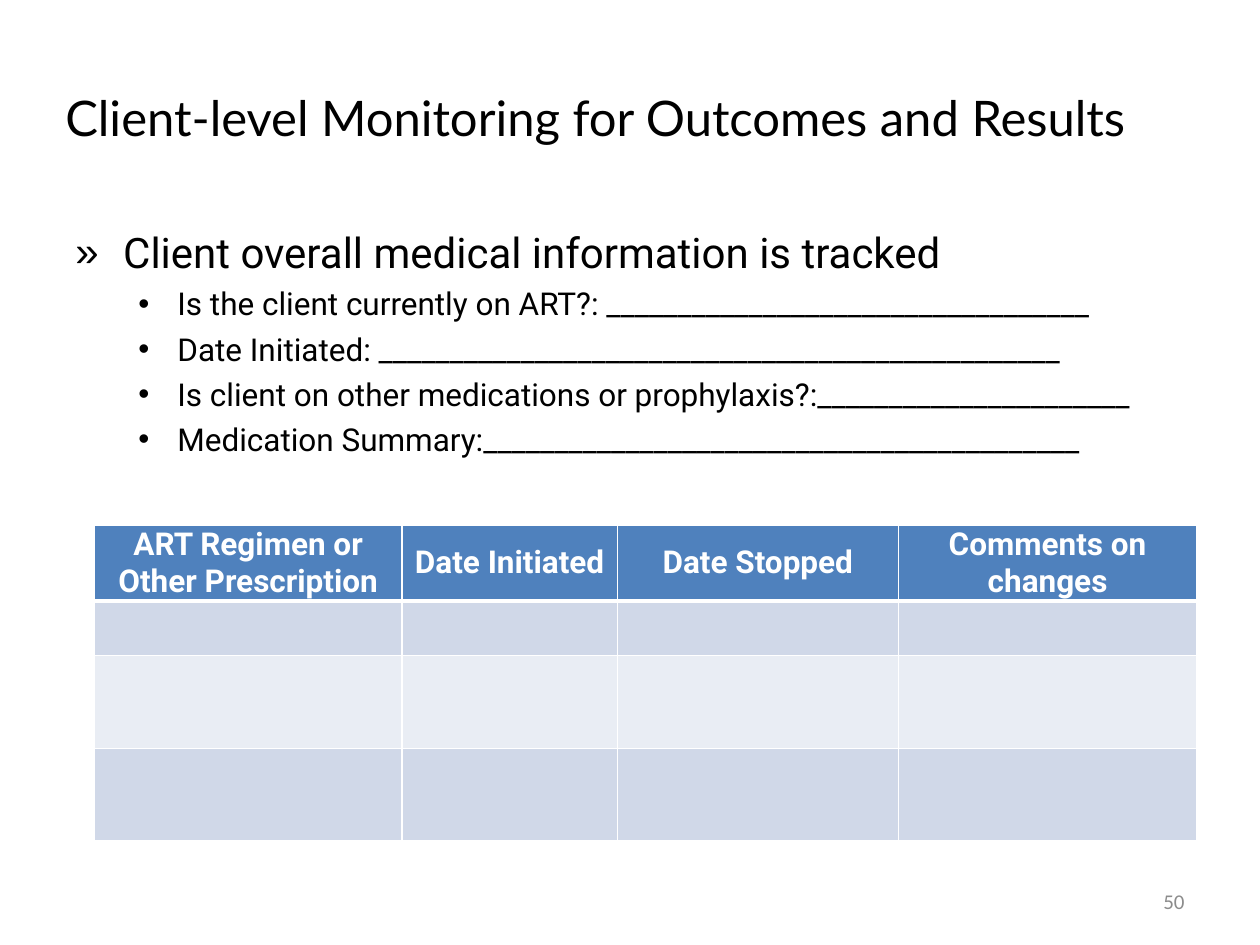
from lxml.etree import SubElement
from pptx import Presentation
from pptx.dml.color import RGBColor
from pptx.enum.text import MSO_ANCHOR, PP_ALIGN
from pptx.oxml.ns import qn
from pptx.util import Inches, Pt

BLACK = RGBColor(0x00, 0x00, 0x00)
WHITE = RGBColor(0xFF, 0xFF, 0xFF)
GRAY = RGBColor(0x8C, 0x8C, 0x8C)
HEADER_BLUE = RGBColor(0x4F, 0x81, 0xBD)
BAND_DARK = RGBColor(0xD0, 0xD8, 0xE8)
BAND_LIGHT = RGBColor(0xE9, 0xED, 0xF4)

QUESTIONS = [
    ("Is the client currently on ART?: ", 34),
    ("Date Initiated: ", 48),
    ("Is client on other medications or prophylaxis?:", 22),
    ("Medication Summary:", 42),
]
HEADERS = ["ART Regimen or Other Prescription", "Date Initiated",
           "Date Stopped", "Comments on changes"]
COLUMN_WIDTHS = [2.44, 1.71, 2.23, 2.37]
ROW_HEIGHTS = [0.6, 0.43, 0.74, 0.73]


def write_text(paragraph, text, *, size, font="Roboto", color=BLACK,
               bold=False, align=PP_ALIGN.LEFT, space_before=0):
    paragraph.alignment = align
    paragraph.space_before = Pt(space_before)
    run = paragraph.add_run()
    run.text = text
    run.font.size = Pt(size)
    run.font.name = font
    run.font.bold = bold
    run.font.color.rgb = color


def add_text_frame(slide, box, anchor):
    text_frame = slide.shapes.add_textbox(*map(Inches, box)).text_frame
    text_frame.word_wrap = True
    text_frame.vertical_anchor = anchor
    return text_frame


def add_single_line(slide, box, text, **text_format):
    text_frame = add_text_frame(slide, box, MSO_ANCHOR.MIDDLE)
    write_text(text_frame.paragraphs[0], text, **text_format)


def set_bullet(paragraph, character, margin, hanging, level=0):
    paragraph.level = level
    properties = paragraph._p.get_or_add_pPr()
    properties.set("marL", str(Inches(margin)))
    properties.set("indent", str(-Inches(hanging)))
    SubElement(properties, qn("a:buFont"), typeface="Arial")
    SubElement(properties, qn("a:buChar"), char=character)


def add_bullets(slide, box):
    text_frame = add_text_frame(slide, box, MSO_ANCHOR.TOP)
    heading = text_frame.paragraphs[0]
    write_text(heading, "Client overall medical information is tracked",
               size=24, space_before=5.6)
    set_bullet(heading, "»", 0.38, 0.38)
    for question, blank_length in QUESTIONS:
        paragraph = text_frame.add_paragraph()
        write_text(paragraph, question + "_" * blank_length,
                   size=18, space_before=4.2)
        set_bullet(paragraph, "•", 0.81, 0.31, level=1)


def set_borders(cell, bottom_width):
    properties = cell._tc.get_or_add_tcPr()
    widths = {"lnL": 1, "lnR": 1, "lnT": 1, "lnB": bottom_width}
    # Borders come before the fill in the cell properties
    for position, (side, width) in enumerate(widths.items()):
        line = SubElement(properties, qn(f"a:{side}"), w=str(Pt(width)))
        fill = SubElement(line, qn("a:solidFill"))
        SubElement(fill, qn("a:srgbClr"), val=str(WHITE))
        properties.insert(position, line)


def add_medication_table(slide, box):
    table = slide.shapes.add_table(len(ROW_HEIGHTS), len(COLUMN_WIDTHS),
                                   *map(Inches, box)).table
    for column, width in zip(table.columns, COLUMN_WIDTHS):
        column.width = Inches(width)
    for row_index, (row, height) in enumerate(zip(table.rows, ROW_HEIGHTS)):
        row.height = Inches(height)
        is_header = row_index == 0
        band = BAND_DARK if row_index % 2 else BAND_LIGHT
        for cell, header in zip(row.cells, HEADERS):
            cell.fill.solid()
            cell.fill.fore_color.rgb = HEADER_BLUE if is_header else band
            # The row under the header shares its thick edge
            set_borders(cell, bottom_width=3 if is_header else 1)
            if is_header:
                cell.vertical_anchor = MSO_ANCHOR.MIDDLE
                cell.margin_left = cell.margin_right = Inches(0.07)
                cell.margin_top = cell.margin_bottom = 0
                write_text(cell.text_frame.paragraphs[0], header, size=18,
                           color=WHITE, bold=True, align=PP_ALIGN.CENTER)
            elif row_index == 1:
                top_line = cell._tc.tcPr.find(qn("a:lnT"))
                top_line.set("w", str(Pt(3)))


def main():
    presentation = Presentation()
    presentation.slide_width = Inches(10)
    presentation.slide_height = Inches(7.5)
    slide = presentation.slides.add_slide(presentation.slide_layouts[6])

    # Title
    add_single_line(slide, (0.42, 0.3, 9.17, 1.25),
                    "Client-level Monitoring for Outcomes and Results",
                    size=28, font="Lato")
    # Questions about the client
    add_bullets(slide, (0.5, 1.75, 9, 4.95))
    # Medication record
    add_medication_table(slide, (0.75, 4.17, 8.75, 2.5))
    # Slide number
    add_single_line(slide, (7.17, 6.95, 2.33, 0.4), "50", size=12,
                    font="Calibri", color=GRAY, align=PP_ALIGN.RIGHT)

    presentation.save("out.pptx")


if __name__ == "__main__":
    main()
